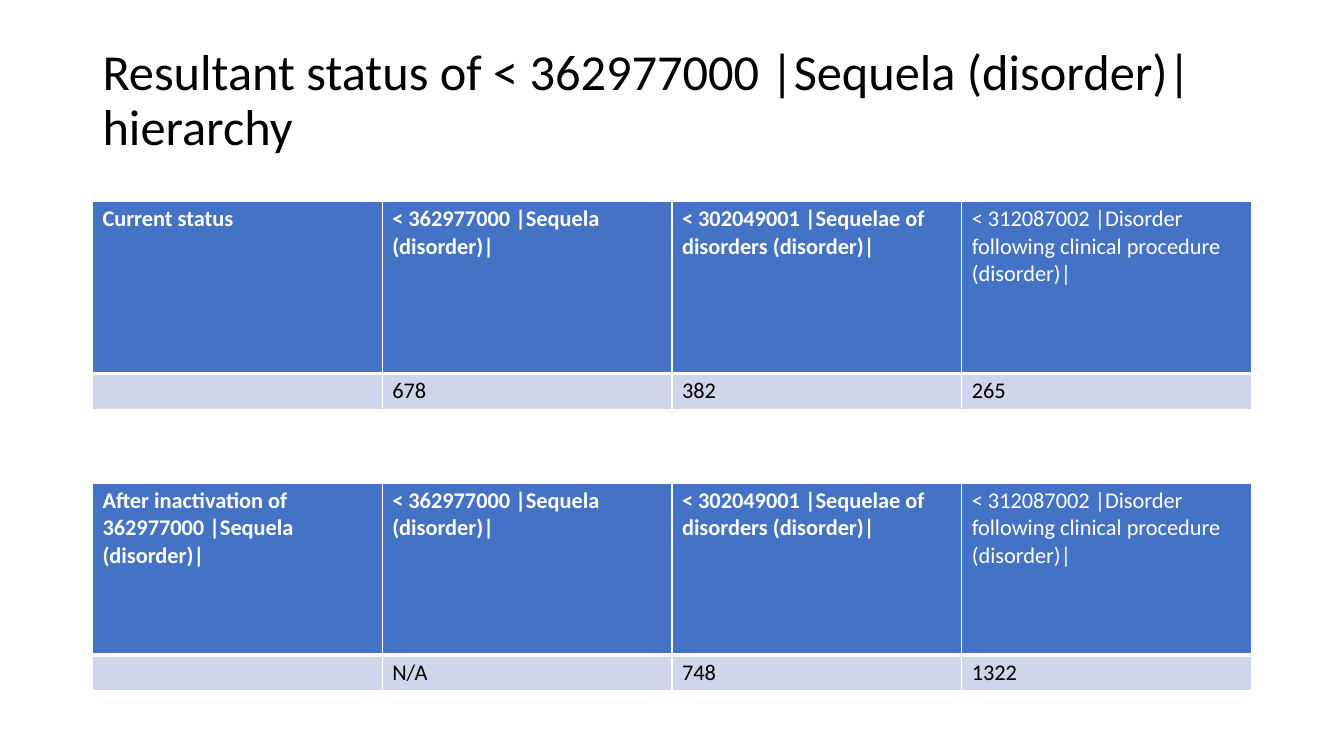
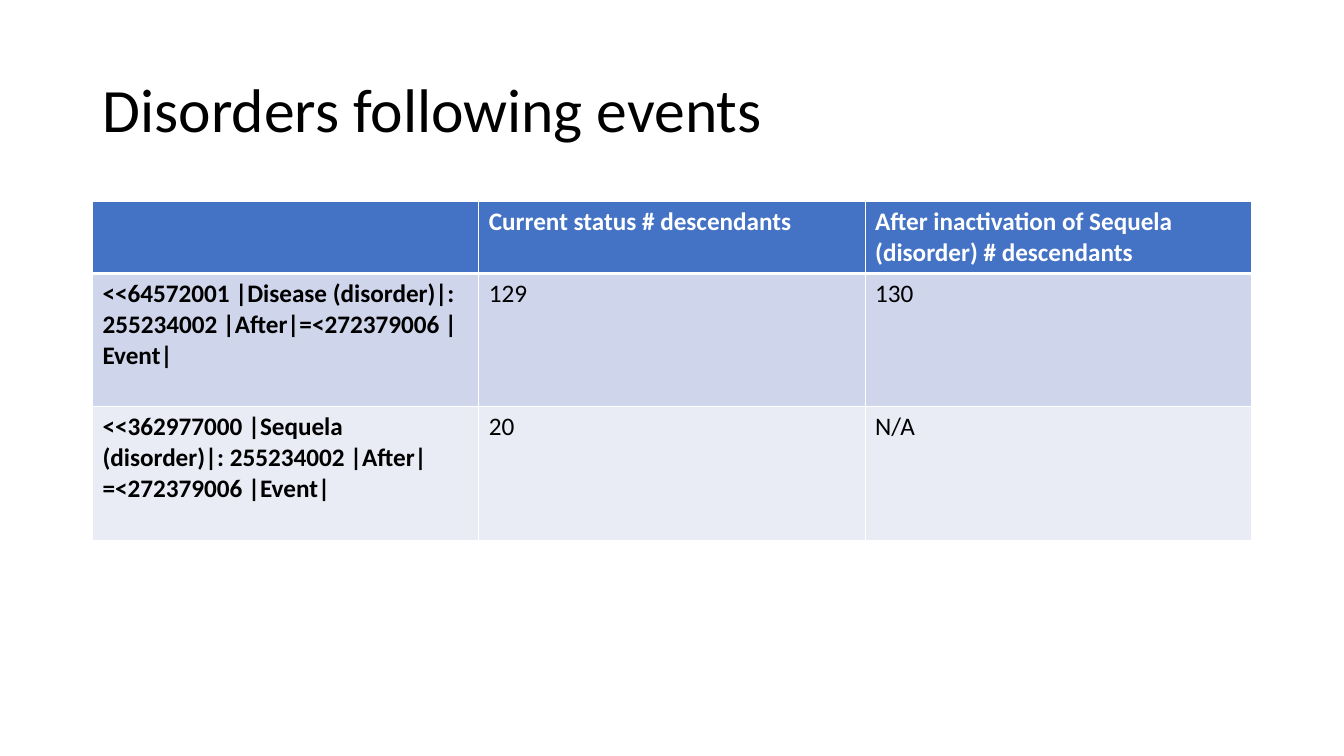
from lxml import etree
from pptx import Presentation
from pptx.dml.color import RGBColor
from pptx.enum import text
from pptx.oxml.ns import qn
from pptx.util import Cm, Pt

FONT = "Calibri"
COLORS = {
    "header": "4472C4",
    "odd row": "CFD5EA",
    "even row": "E9EBF5",
    "light": "FFFFFF",
    "dark": "000000",
}
LEFT, WIDTH = Cm(2.33), Cm(29.21)
TITLE_TOP, TITLE_HEIGHT = Cm(1.01), Cm(3.68)

HIERARCHIES = [
    "< 362977000 |Sequela (disorder)|",
    "< 302049001 |Sequelae of disorders (disorder)|",
    "< 312087002 |Disorder following clinical procedure (disorder)|",
]
# Plain cells are (row, column) positions set in regular weight.
STATUS_STYLE = {
    "size": 16, "margin": Cm(0.1), "heights": [4.33, 0.91],
    "plain": {(0, 3), (1, 1), (1, 2), (1, 3)},
}
EVENTS_STYLE = {
    "size": 18, "margin": Cm(0.13), "heights": [1.78, 3.36, 3.36],
    "plain": {(1, 1), (1, 2), (2, 1), (2, 2)},
}
SLIDES = [
    {
        "title": "Resultant status of < 362977000 |Sequela (disorder)|hierarchy",
        "title size": 36,
        "title bottom": Cm(0.7),
        "tables": [
            (5.08, STATUS_STYLE, [
                ["Current status", *HIERARCHIES],
                ["", "678", "382", "265"],
            ]),
            (12.17, STATUS_STYLE, [
                ["After inactivation of 362977000 |Sequela (disorder)|", *HIERARCHIES],
                ["", "N/A", "748", "1322"],
            ]),
        ],
    },
    {
        "title": "Disorders following events",
        "title size": 44,
        "title bottom": Cm(0.13),
        "tables": [
            (5.08, EVENTS_STYLE, [
                ["", "Current status # descendants",
                 "After inactivation of Sequela (disorder) # descendants"],
                ["<<64572001 |Disease (disorder)|: 255234002 |After|=<272379006 |Event|",
                 "129", "130"],
                ["<<362977000 |Sequela (disorder)|: 255234002 |After|=<272379006 |Event|",
                 "20", "N/A"],
            ]),
        ],
    },
]


def add_run(paragraph, words, size, color, bold=False):
    run = paragraph.add_run()
    run.text = words
    run.font.name = FONT
    run.font.size = Pt(size)
    run.font.bold = bold
    run.font.color.rgb = RGBColor.from_string(COLORS[color])


def add_title(slide, content):
    title = slide.shapes.title
    title.left, title.top = LEFT, TITLE_TOP
    title.width, title.height = WIDTH, TITLE_HEIGHT
    frame = title.text_frame
    frame.auto_size = text.MSO_AUTO_SIZE.NONE
    frame.vertical_anchor = text.MSO_ANCHOR.MIDDLE
    frame.margin_bottom = content["title bottom"]
    paragraph = frame.paragraphs[0]
    paragraph.alignment = text.PP_ALIGN.LEFT
    paragraph.line_spacing = 0.9
    add_run(paragraph, content["title"], content["title size"], "dark")


def add_borders(cell, row):
    """White rules, with a thicker one between the header and the body."""
    widths = {"L": 1, "R": 1, "T": 3 if row == 1 else 1, "B": 3 if row == 0 else 1}
    properties = cell._tc.get_or_add_tcPr()
    for side, width in widths.items():
        line = etree.SubElement(properties, qn(f"a:ln{side}"), w=str(Pt(width)))
        fill = etree.SubElement(line, qn("a:solidFill"))
        etree.SubElement(fill, qn("a:srgbClr"), val=COLORS["light"])


def fill_cell(cell, words, row, column, style):
    add_borders(cell, row)
    band = "header" if row == 0 else "odd row" if row % 2 else "even row"
    cell.fill.solid()
    cell.fill.fore_color.rgb = RGBColor.from_string(COLORS[band])
    cell.margin_top = cell.margin_bottom = style["margin"]
    paragraph = cell.text_frame.paragraphs[0]
    if words:
        add_run(paragraph, words, style["size"], "dark" if row else "light",
                (row, column) not in style["plain"])
    else:
        etree.SubElement(paragraph._p, qn("a:endParaRPr"), sz=str(style["size"] * 100))


def add_status_table(slide, top, style, rows):
    heights = [Cm(height) for height in style["heights"]]
    table = slide.shapes.add_table(
        len(rows), len(rows[0]), LEFT, Cm(top), WIDTH, sum(heights)).table
    table.horz_banding = False
    for table_row, height in zip(table.rows, heights):
        table_row.height = height
    for row, entries in enumerate(rows):
        for column, words in enumerate(entries):
            fill_cell(table.cell(row, column), words, row, column, style)


def main():
    deck = Presentation()
    deck.slide_width, deck.slide_height = Cm(33.87), Cm(19.05)
    title_only = deck.slide_layouts[5]
    for content in SLIDES:
        slide = deck.slides.add_slide(title_only)
        add_title(slide, content)
        for top, style, rows in content["tables"]:
            add_status_table(slide, top, style, rows)
    deck.save("out.pptx")


if __name__ == "__main__":
    main()
